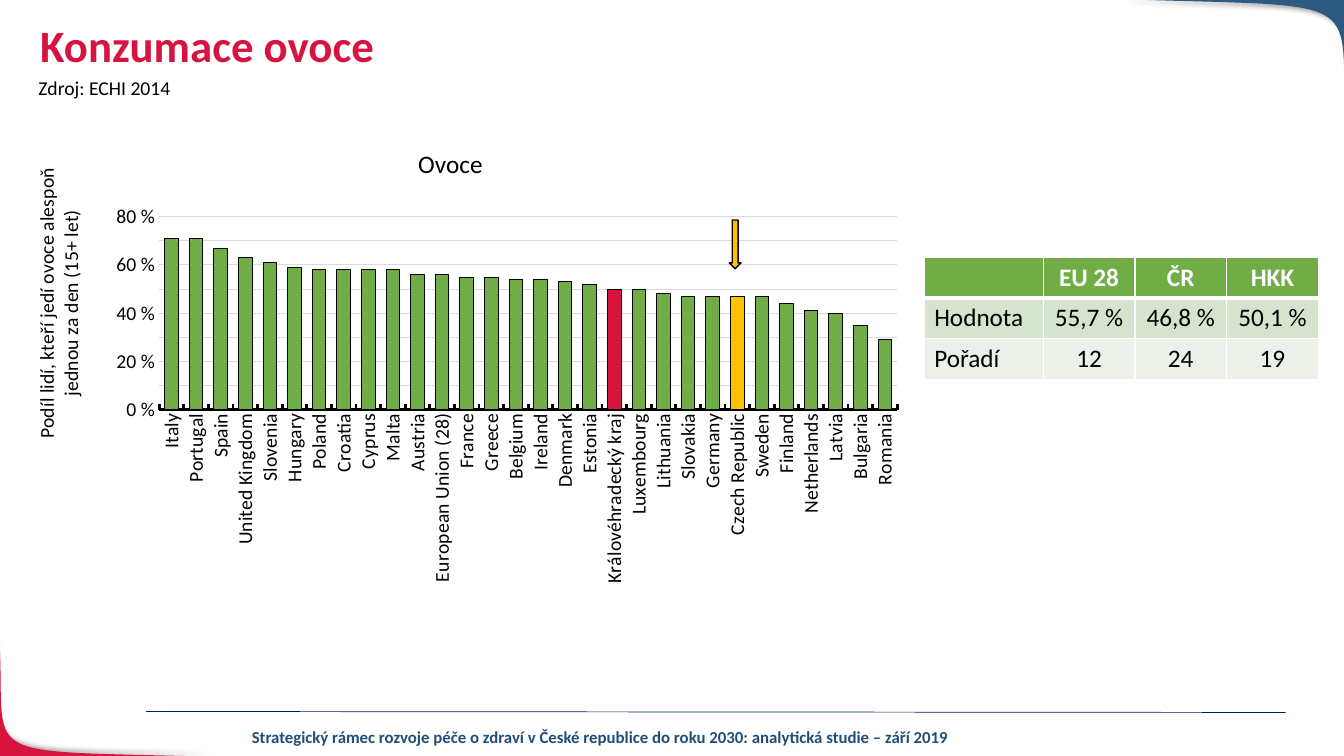
from copy import deepcopy

from lxml import etree
from pptx import Presentation
from pptx.chart.data import CategoryChartData
from pptx.dml.color import RGBColor
from pptx.enum.chart import XL_CHART_TYPE, XL_TICK_MARK
from pptx.enum.shapes import MSO_CONNECTOR, MSO_SHAPE
from pptx.enum.text import PP_ALIGN
from pptx.oxml import parse_xml
from pptx.oxml.ns import nsdecls, qn
from pptx.util import Emu, Inches, Pt

COLUMN = XL_CHART_TYPE.COLUMN_CLUSTERED
TICK_IN, TICK_NONE = XL_TICK_MARK.INSIDE, XL_TICK_MARK.NONE
STRAIGHT = MSO_CONNECTOR.STRAIGHT
DOWN_ARROW = MSO_SHAPE.DOWN_ARROW
LEFT, CENTER = PP_ALIGN.LEFT, PP_ALIGN.CENTER

COLUMNS, ROWS = 160, 90
WIDTH, HEIGHT = Inches(13.33), Inches(7.5)
CELL = HEIGHT / ROWS
FONT = "Calibri"
BLACK, WHITE = "000000", "FFFFFF"
RED, GREEN, YELLOW, BLUE = "D71440", "70AD47", "FFC000", "2E5980"

FRUIT = {
    "Italy": 71, "Portugal": 71, "Spain": 67, "United Kingdom": 63, "Slovenia": 61,
    "Hungary": 59, "Poland": 58, "Croatia": 58, "Cyprus": 58, "Malta": 58,
    "Austria": 56, "European Union (28)": 56, "France": 55, "Greece": 55,
    "Belgium": 54, "Ireland": 54, "Denmark": 53, "Estonia": 52,
    "Královéhradecký kraj": 50, "Luxembourg": 50, "Lithuania": 48, "Slovakia": 47,
    "Germany": 47, "Czech Republic": 47, "Sweden": 47, "Finland": 44,
    "Netherlands": 41, "Latvia": 40, "Bulgaria": 35, "Romania": 29,
}
HIGHLIGHTS = {"Královéhradecký kraj": RED, "Czech Republic": YELLOW}
RANKING = [
    ["", "EU 28", "ČR", "HKK"],
    ["Hodnota", "55,7 %", "46,8 %", "50,1 %"],
    ["Pořadí", "12", "24", "19"],
]
RANKING_FILLS = [GREEN, "D5E3CF", "EBF1E9"]


def color(value):
    return RGBColor.from_string(value)


def grid(*lengths):
    """Turn grid cells into EMU."""
    return [Emu(round(length * CELL)) for length in lengths]


def set_font(font, size, value=BLACK, bold=False):
    font.name, font.size, font.bold = FONT, Pt(size), bold
    font.color.rgb = color(value)


def set_line(line, value, width):
    line.color.rgb = color(value)
    line.width = Pt(width)


def add_text(page, box, text, size, value=BLACK, bold=False, align=LEFT, wrap=True):
    frame = page.shapes.add_textbox(*grid(*box)).text_frame
    frame.word_wrap = wrap
    para = frame.paragraphs[0]
    para.text, para.alignment = text, align
    set_font(para.font, size, value, bold)
    return para


def add_corner(page, box, fill, turned=False):
    """Draw a curved corner with a soft shadow; turned rotates it by half a turn."""
    left, top, width, height = grid(*box)
    controls = [(0, 0), (1.16, 0.06), (0.96, -0.06), (1, 1)]

    def place(across, down):
        if turned:
            across, down = 1 - across, 1 - down
        return left + across * width, top + down * height

    def curve(share):
        rest = 1 - share
        weights = [rest ** 3, 3 * rest ** 2 * share, 3 * rest * share ** 2, share ** 3]
        return [sum(w * point[axis] for w, point in zip(weights, controls)) for axis in (0, 1)]

    builder = page.shapes.build_freeform(*place(0, 0), scale=1.0)
    outline = [place(*curve(step / 40)) for step in range(1, 41)]
    builder.add_line_segments(outline + [place(1, 0)], close=True)
    corner = builder.convert_to_shape()
    corner.fill.solid()
    corner.fill.fore_color.rgb = color(fill)
    corner.line.fill.background()
    direction = (225 if turned else 45) * 60000
    corner._element.spPr.append(parse_xml(
        f'<a:effectLst {nsdecls("a")}><a:outerShdw blurRad="{Pt(4)}" dist="{Pt(3)}" '
        f'dir="{direction}" rotWithShape="0"><a:srgbClr val="{BLACK}">'
        '<a:alpha val="40000"/></a:srgbClr></a:outerShdw></a:effectLst>'))


def add_footer(page, box):
    left, top, width, height = box
    rule = page.shapes.add_connector(
        STRAIGHT, *grid(left, top, left + width, top + 0.12))
    set_line(rule.line, "002060", 0.5)
    etree.SubElement(rule._element.spPr, qn("a:effectLst"))
    add_text(page, (left + 5.5, top + 1.2, 97.1, height - 1.2),
             "Strategický rámec rozvoje péče o zdraví v České republice do roku 2030: "
             "analytická studie – září 2019", 12, "1F4E79", True, CENTER)


def set_layout(element, index, target="", **shares):
    """Fix the place of a chart part by shares of the chart."""
    for old in element.findall(qn("c:layout")):
        element.remove(old)
    inner = f'<c:layoutTarget val="{target}"/>' if target else ""
    modes = "".join(f'<c:{key}Mode val="edge"/>' for key in "xy")
    values = "".join(f'<c:{key} val="{share}"/>' for key, share in shares.items())
    element.insert(index, parse_xml(
        f'<c:layout {nsdecls("c")}><c:manualLayout>{inner}{modes}{values}'
        '</c:manualLayout></c:layout>'))


def set_title(title, lines, size, x, y):
    frame = title.text_frame
    frame.text = "\n".join(lines)
    for para in frame.paragraphs:
        set_font(para.font, size)
    set_layout(title._element, 1, x=x, y=y)
    return frame._txBody.find(qn("a:bodyPr"))


def turn_upright(body):
    body.set("rot", "-5400000")
    body.set("vert", "horz")


def add_fruit_chart(page, box):
    data = CategoryChartData()
    data.categories = list(FRUIT)
    data.add_series("Ovoce", list(FRUIT.values()))
    chart = page.shapes.add_chart(COLUMN, *grid(*box), data).chart
    set_font(chart.font, 10)
    chart.has_legend = False
    set_title(chart.chart_title, ["Ovoce"], 18, 0.44, 0.02)
    set_layout(chart._chartSpace.chart.plotArea, 0, "inner", x=0.155, y=0.183, w=0.827, h=0.42)

    plot = chart.plots[0]
    plot.gap_width, plot.overlap, plot.vary_by_categories = 81, -27, False
    series = plot.series[0]
    series.format.fill.solid()
    series.format.fill.fore_color.rgb = color(GREEN)
    set_line(series.format.line, BLACK, 0.75)
    for index, country in enumerate(FRUIT):
        if country in HIGHLIGHTS:
            bar = series.points[index].format
            bar.fill.solid()
            bar.fill.fore_color.rgb = color(HIGHLIGHTS[country])
            set_line(bar.line, BLACK, 0.75)

    countries = chart.category_axis
    countries.major_tick_mark = TICK_IN
    set_line(countries.format.line, BLACK, 2)
    set_font(countries.tick_labels.font, 14)
    turn_upright(countries._element.find(qn("c:txPr")).find(qn("a:bodyPr")))

    shares = chart.value_axis
    shares.minimum_scale, shares.maximum_scale = 0, 80
    shares.major_unit, shares.minor_unit = 20, 10
    shares.major_tick_mark = TICK_NONE
    shares.format.line.fill.background()
    set_font(shares.tick_labels.font, 14)
    shares.tick_labels.number_format = '#,##0" %"'
    shares.tick_labels.number_format_is_linked = False
    set_line(shares.major_gridlines.format.line, "D9D9D9", 0.75)
    shares.has_minor_gridlines = True
    major, minor = (shares._element.find(qn(f"c:{kind}Gridlines")) for kind in ("major", "minor"))
    minor.append(deepcopy(major[0]))
    lines = ["Podíl lidí, kteří jedí ovoce alespoň", "jednou za den (15+ let)"]
    turn_upright(set_title(shares.axis_title, lines, 14, 0.01, 0.07))


def add_arrow(page, box):
    arrow = page.shapes.add_shape(DOWN_ARROW, *grid(*box))
    arrow.shadow.inherit = False
    arrow.fill.solid()
    arrow.fill.fore_color.rgb = color(YELLOW)
    set_line(arrow.line, BLACK, 1)


def set_borders(cell, widths):
    for index, (side, width) in enumerate(zip("LRTB", widths)):
        cell._tc.get_or_add_tcPr().insert(index, parse_xml(
            f'<a:ln{side} {nsdecls("a")} w="{Pt(width)}"><a:solidFill>'
            f'<a:srgbClr val="{WHITE}"/></a:solidFill></a:ln{side}>'))


def add_ranking(page, box):
    table = page.shapes.add_table(len(RANKING), len(RANKING[0]), *grid(*box)).table
    table.horz_banding = False
    label_share, value_share = 0.302, 0.2327
    for index, column in enumerate(table.columns):
        column.width = grid(box[2] * (value_share if index else label_share))[0]
    for row, texts in enumerate(RANKING):
        for column, text in enumerate(texts):
            cell = table.cell(row, column)
            cell.fill.solid()
            cell.fill.fore_color.rgb = color(RANKING_FILLS[row])
            set_borders(cell, (1, 1, 3 if row == 1 else 1, 3 if row == 0 else 1))
            para = cell.text_frame.paragraphs[0]
            para.text, para.alignment = text, CENTER if column else LEFT
            set_font(para.font, 18, BLACK if row else WHITE, row == 0)


def main():
    deck = Presentation()
    deck.slide_width, deck.slide_height = WIDTH, HEIGHT
    page = deck.slides.add_slide(deck.slide_layouts[6])
    add_corner(page, (-0.1, 75.6, 25.7, 14.5), RED, turned=True)
    add_corner(page, (COLUMNS - 26.7, -0.1, 26.9, 17.2), BLUE)
    add_footer(page, (17.4, 84.7, 135.6, 4.8))
    add_text(page, (3.4, 8.5, 18.2, 4.1), "Zdroj: ECHI 2014", 14, wrap=False)
    heading = add_text(page, (3.6, 2.2, 138, 8.3), "Konzumace ovoce", 32, RED, True)
    heading.line_spacing = 0.9
    add_fruit_chart(page, (2.5, 15.8, 106.2, 54.7))
    add_arrow(page, (86.8, 26.2, 1.4, 5.8))
    add_ranking(page, (110, 30.6, 46.9, 14.6))
    deck.save("out.pptx")


if __name__ == "__main__":
    main()
